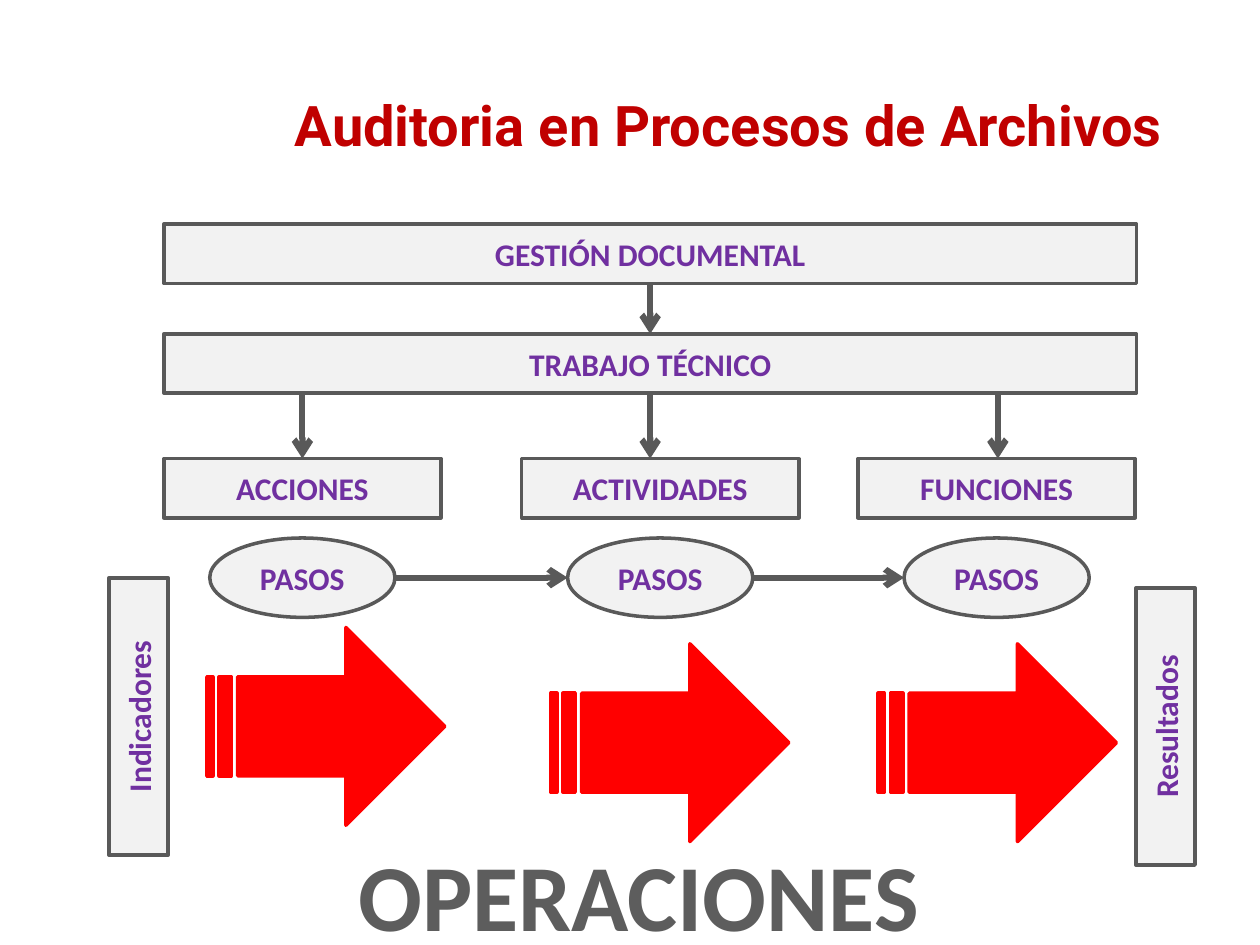
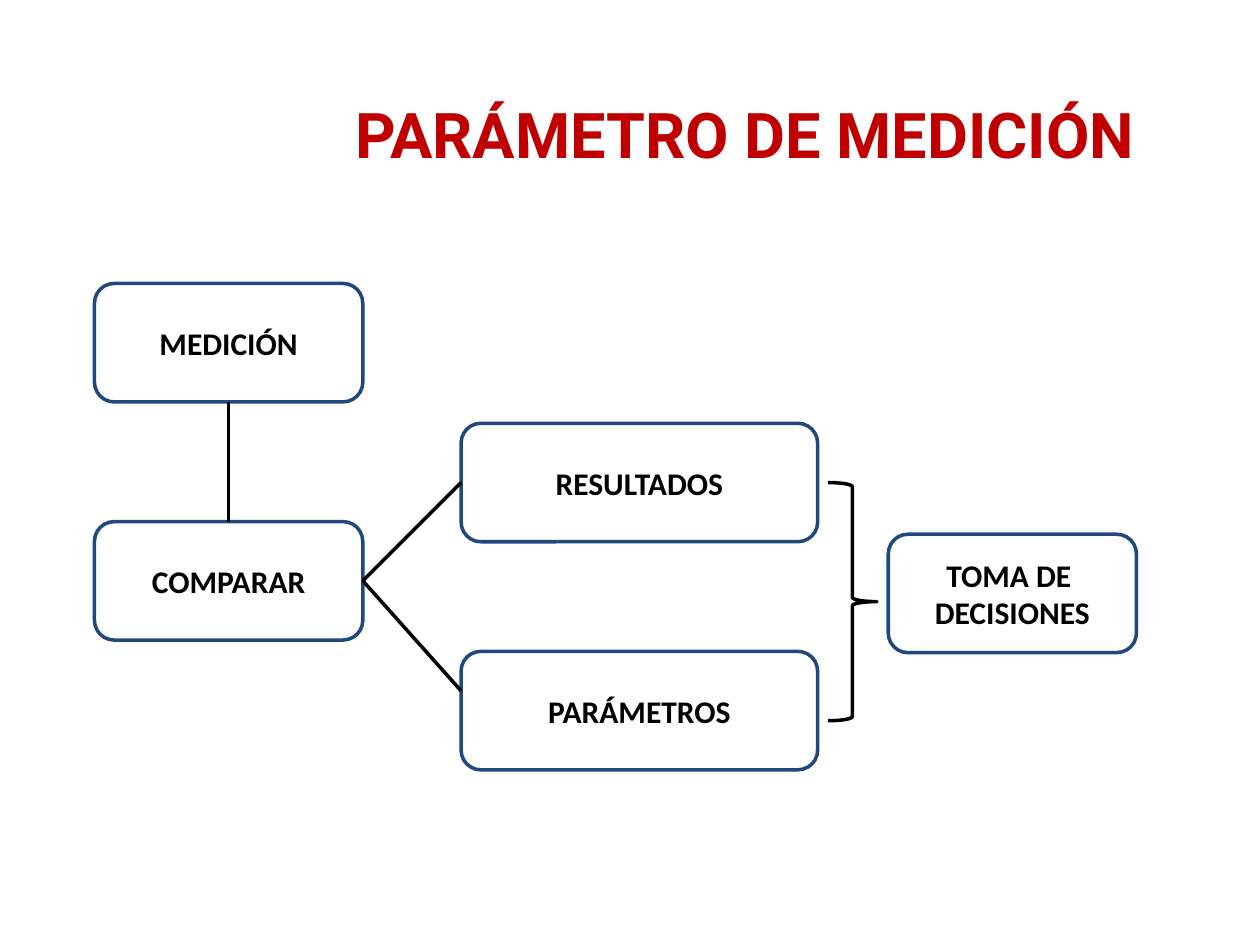
from lxml import etree
from pptx import Presentation
from pptx.dml.color import RGBColor
from pptx.enum.shapes import MSO_CONNECTOR, MSO_SHAPE
from pptx.enum.text import MSO_ANCHOR, PP_ALIGN
from pptx.oxml.ns import qn
from pptx.util import Inches, Pt

RECTANGLE = MSO_SHAPE.RECTANGLE
ROUNDED = MSO_SHAPE.ROUNDED_RECTANGLE
OVAL = MSO_SHAPE.OVAL
STRIPED_ARROW = MSO_SHAPE.STRIPED_RIGHT_ARROW
BRACE = MSO_SHAPE.RIGHT_BRACE
STRAIGHT = MSO_CONNECTOR.STRAIGHT
MIDDLE, TOP = MSO_ANCHOR.MIDDLE, MSO_ANCHOR.TOP
LEFT, CENTER = PP_ALIGN.LEFT, PP_ALIGN.CENTER

SLIDE_WIDTH, SLIDE_HEIGHT = Inches(10), Inches(7.5)
COLUMN, ROW = SLIDE_WIDTH / 100, SLIDE_HEIGHT / 75

TITLE_FONT, BODY_FONT = "Roboto", "Calibri"
RED, BRIGHT_RED, PURPLE = "C00000", "FF0000", "7030A0"
GRAY, PALE_GRAY, CAPTION_GRAY = "595959", "F2F2F2", "5D5D5D"
NAVY, BLACK = "1F497D", "000000"


def rgb(color):
    return RGBColor.from_string(color)


def place(left, top, width, height):
    return (round(left * COLUMN), round(top * ROW),
            round(width * COLUMN), round(height * ROW))


def write(frame, lines, color, size=18, font=BODY_FONT, align=CENTER,
          anchor=MIDDLE, wrap=True):
    frame.word_wrap = wrap
    frame.vertical_anchor = anchor
    for index, line in enumerate(lines):
        paragraph = frame.add_paragraph() if index else frame.paragraphs[0]
        paragraph.alignment = align
        run = paragraph.add_run()
        run.text = line
        run.font.name = font
        run.font.size = Pt(size)
        run.font.bold = True
        run.font.color.rgb = rgb(color)


def add_title(slide, text, area, size):
    title = slide.shapes.add_textbox(*place(*area))
    write(title.text_frame, [text], RED, size, TITLE_FONT, LEFT)


def add_figure(slide, kind, area, line, fill=None):
    figure = slide.shapes.add_shape(kind, *place(*area))
    figure.shadow.inherit = False
    if fill:
        figure.fill.solid()
        figure.fill.fore_color.rgb = rgb(fill)
    else:
        figure.fill.background()
    figure.line.color.rgb = rgb(line)
    figure.line.width = Pt(2)
    return figure


def add_process(slide, text, area, kind=RECTANGLE, rotation=0):
    process = add_figure(slide, kind, area, GRAY, PALE_GRAY)
    process.rotation = rotation
    write(process.text_frame, [text], PURPLE)


def add_concept(slide, lines, area):
    concept = add_figure(slide, ROUNDED, area, NAVY)
    write(concept.text_frame, lines, BLACK)


def add_link(slide, start, end, color=BLACK, width=2, arrow=False):
    link = slide.shapes.add_connector(
        STRAIGHT, round(start[0] * COLUMN), round(start[1] * ROW),
        round(end[0] * COLUMN), round(end[1] * ROW))
    link.line.color.rgb = rgb(color)
    link.line.width = Pt(width)
    if arrow:
        outline = link.line._get_or_add_ln()
        etree.SubElement(outline, qn("a:tailEnd"), type="arrow")
    etree.SubElement(link._element.spPr, qn("a:effectLst"))


def add_flow(slide, start, end):
    add_link(slide, start, end, GRAY, 3.5, arrow=True)


def build_audit(slide):
    left, full_width, branch_width, bar_height = 13, 77.2, 22, 4.7
    management_top, work_top, branch_top = 17.8, 26.5, 36.4
    step_top, step_width, step_height = 42.7, 14.7, 6.3
    center = left + full_width / 2
    work_bottom = work_top + bar_height

    for arrow_left, arrow_top in ((16.4, 49.8), (43.7, 51.1), (69.7, 51.1)):
        add_figure(slide, STRIPED_ARROW, (arrow_left, arrow_top, 18.9, 15.7),
                   BRIGHT_RED, BRIGHT_RED)

    for text, side_left, side_top in (("Indicadores", 0, 54.5),
                                      ("Resultados", 81.5, 55.3)):
        add_process(slide, text, (side_left, side_top, branch_width, bar_height),
                    rotation=270)

    for text, bar_top in (("GESTIÓN DOCUMENTAL", management_top),
                          ("TRABAJO TÉCNICO", work_top)):
        add_process(slide, text, (left, bar_top, full_width, bar_height))
    add_flow(slide, (center, management_top + bar_height), (center, work_top))

    branch_lefts = (left, 41.4, 68.1)
    for text, branch_left in zip(("ACCIONES", "ACTIVIDADES", "FUNCIONES"),
                                 branch_lefts):
        add_process(slide, text,
                    (branch_left, branch_top, branch_width, bar_height))
    for offset in (-27.6, 0, 27.6):
        add_flow(slide, (center + offset, work_bottom),
                 (center + offset, branch_top))

    step_lefts = [branch_left + (branch_width - step_width) / 2
                  for branch_left in branch_lefts]
    step_middle = step_top + step_height / 2
    for step_left in step_lefts:
        add_process(slide, "PASOS",
                    (step_left, step_top, step_width, step_height), OVAL)
    for step_left, next_left in zip(step_lefts, step_lefts[1:]):
        add_flow(slide, (step_left + step_width, step_middle),
                 (next_left, step_middle))

    caption = slide.shapes.add_textbox(*place(27.2, 65.9, 47, 10.1))
    write(caption.text_frame, ["OPERACIONES"], CAPTION_GRAY, 54,
          anchor=TOP, wrap=False)


def build_measurement(slide):
    height = 9.4
    source_left, source_width = 7.5, 21.3
    outcome_left, outcome_width = 36.6, 28.3
    measure_top, compare_top = 22.5, 41.4
    result_top, parameter_top = 33.6, 51.7
    source_center = source_left + source_width / 2
    fork = (source_left + source_width, compare_top + height / 2)

    for lines, area in (
        (["MEDICIÓN"], (source_left, measure_top, source_width, height)),
        (["COMPARAR"], (source_left, compare_top, source_width, height)),
        (["RESULTADOS"], (outcome_left, result_top, outcome_width, height)),
        (["PARÁMETROS"], (outcome_left, parameter_top, outcome_width, height)),
        (["TOMA DE ", "DECISIONES"], (70.5, 42.4, 19.7, height)),
    ):
        add_concept(slide, lines, area)

    add_figure(slide, BRACE, (65.7, 38.3, 3.9, 18.9), BLACK)
    add_link(slide, (source_center, measure_top + height),
             (source_center, compare_top))
    for branch_end in (result_top + height / 2, parameter_top + height / 3):
        add_link(slide, fork, (outcome_left, branch_end))


def main():
    deck = Presentation()
    deck.slide_width, deck.slide_height = SLIDE_WIDTH, SLIDE_HEIGHT
    blank = deck.slide_layouts[6]
    for title, area, size, build in (
        ("Auditoria en Procesos de Archivos", (22.4, 2.9, 71.3, 13.9), 32,
         build_audit),
        ("PARÁMETRO DE MEDICIÓN", (27.2, 3.6, 65, 13.9), 36,
         build_measurement),
    ):
        slide = deck.slides.add_slide(blank)
        add_title(slide, title, area, size)
        build(slide)
    deck.save("out.pptx")


if __name__ == "__main__":
    main()
